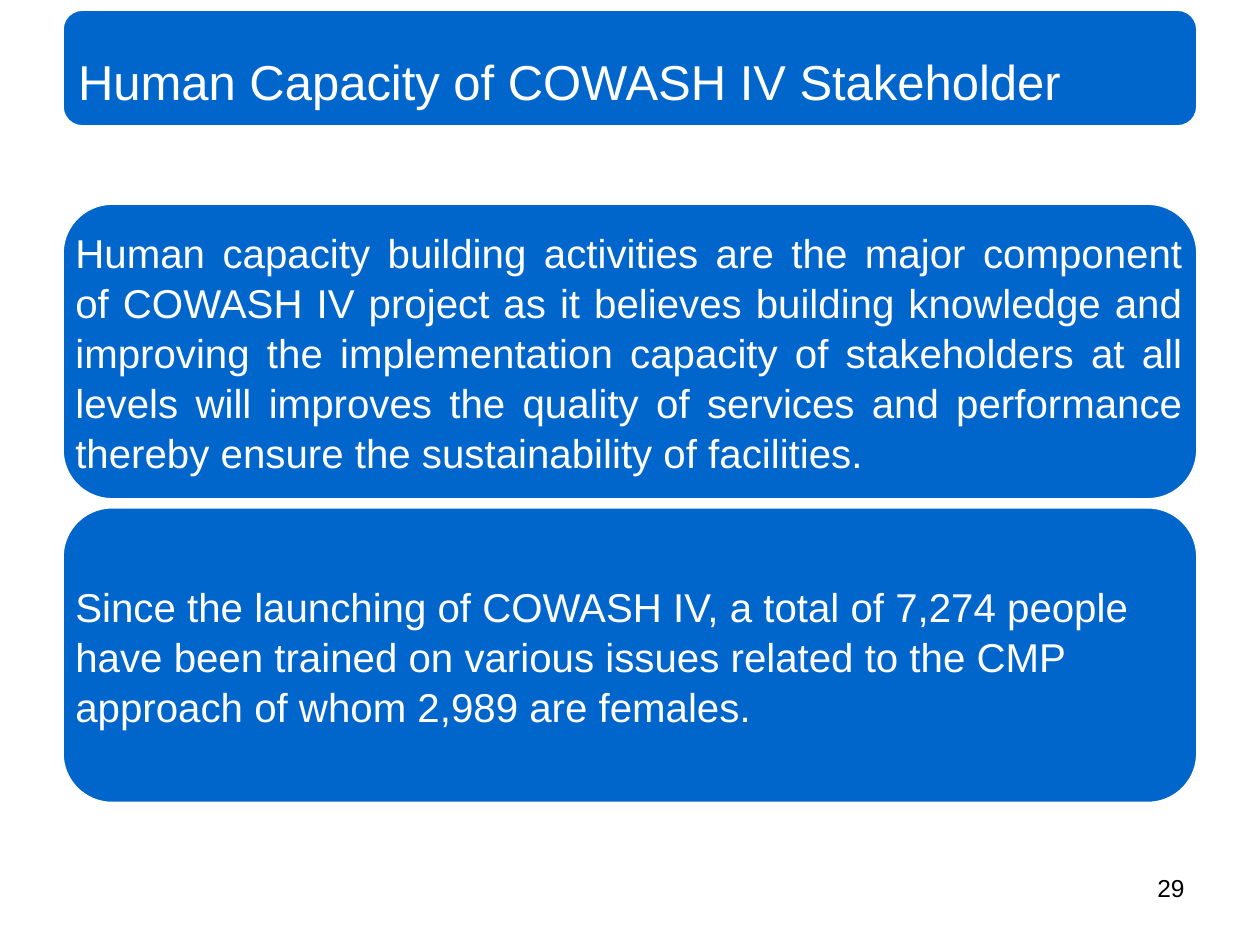
from pptx import Presentation
from pptx.dml.color import RGBColor
from pptx.enum.shapes import MSO_SHAPE as Shape
from pptx.enum.text import MSO_ANCHOR as Anchor, PP_ALIGN as Align
from pptx.util import Inches, Pt

BLUE = RGBColor(0x00, 0x66, 0xCC)
WHITE = RGBColor(0xFF, 0xFF, 0xFF)
BLACK = RGBColor(0x00, 0x00, 0x00)

# Content
HEADING = "Human Capacity of COWASH IV Stakeholder"
STATEMENTS = [
    ("Human capacity building activities are the major component of COWASH IV "
     "project as it believes building knowledge and improving the implementation "
     "capacity of stakeholders at all levels will improves the quality of services "
     "and performance thereby ensure the sustainability of facilities.", Align.JUSTIFY),
    ("Since the launching of COWASH IV, a total of 7,274 people have been trained "
     "on various issues related to the CMP approach of whom 2,989 are females.",
     Align.LEFT),
]
PAGE_NUMBER = "29"

# Layout in inches
MARGIN, WIDTH = 0.5, 9
HEADER_TOP, HEADER_HEIGHT, HEADING_DROP = 0.08, 0.92, 0.1
PANEL_TOP, PANEL_HEIGHT, PANEL_GAP = 1.62, 2.34, 0.07

deck = Presentation()
deck.slide_width, deck.slide_height = Inches(10), Inches(7.5)
slide = deck.slides.add_slide(deck.slide_layouts[5])


def add_panel(top, height):
    panel = slide.shapes.add_shape(Shape.ROUNDED_RECTANGLE, Inches(MARGIN),
                                   Inches(top), Inches(WIDTH), Inches(height))
    panel.shadow.inherit = False
    panel.fill.solid()
    panel.fill.fore_color.rgb = BLUE
    panel.line.color.rgb = WHITE
    panel.line.width = Pt(1)
    return panel


def write(holder, text, size, color=WHITE, align=Align.LEFT, anchor=Anchor.MIDDLE,
          inset=0.1, spacing=1.0):
    frame = holder.text_frame
    frame.word_wrap = True
    frame.vertical_anchor = anchor
    frame.margin_left = frame.margin_right = Inches(inset)
    frame.margin_top = frame.margin_bottom = Inches(inset)
    frame.text = text
    paragraph = frame.paragraphs[0]
    paragraph.alignment = align
    paragraph.line_spacing = spacing
    font = paragraph.runs[0].font
    font.name, font.size, font.color.rgb = "Arial", Pt(size), color


def add_text(left, top, width, height, text, size, **text_format):
    box = slide.shapes.add_textbox(Inches(left), Inches(top),
                                   Inches(width), Inches(height))
    write(box, text, size, **text_format)


# Header: title on its panel
header = add_panel(HEADER_TOP, HEADER_HEIGHT)
heading = slide.shapes.title
heading.element.addprevious(header.element)
heading.left, heading.top = Inches(MARGIN), Inches(HEADER_TOP + HEADING_DROP)
heading.width, heading.height = Inches(WIDTH), Inches(HEADER_HEIGHT)
write(heading, HEADING, 28, inset=0.12)

# Statement panels
for row, (statement, align) in enumerate(STATEMENTS):
    top = PANEL_TOP + row * (PANEL_HEIGHT + PANEL_GAP)
    add_panel(top, PANEL_HEIGHT)
    add_text(MARGIN, top, WIDTH, PANEL_HEIGHT, statement, 23, align=align, spacing=1.04)

# Page number
add_text(7.17, 6.83, 2.33, 0.52, PAGE_NUMBER, 14, color=BLACK, align=Align.RIGHT,
         anchor=Anchor.TOP)

deck.save("out.pptx")
